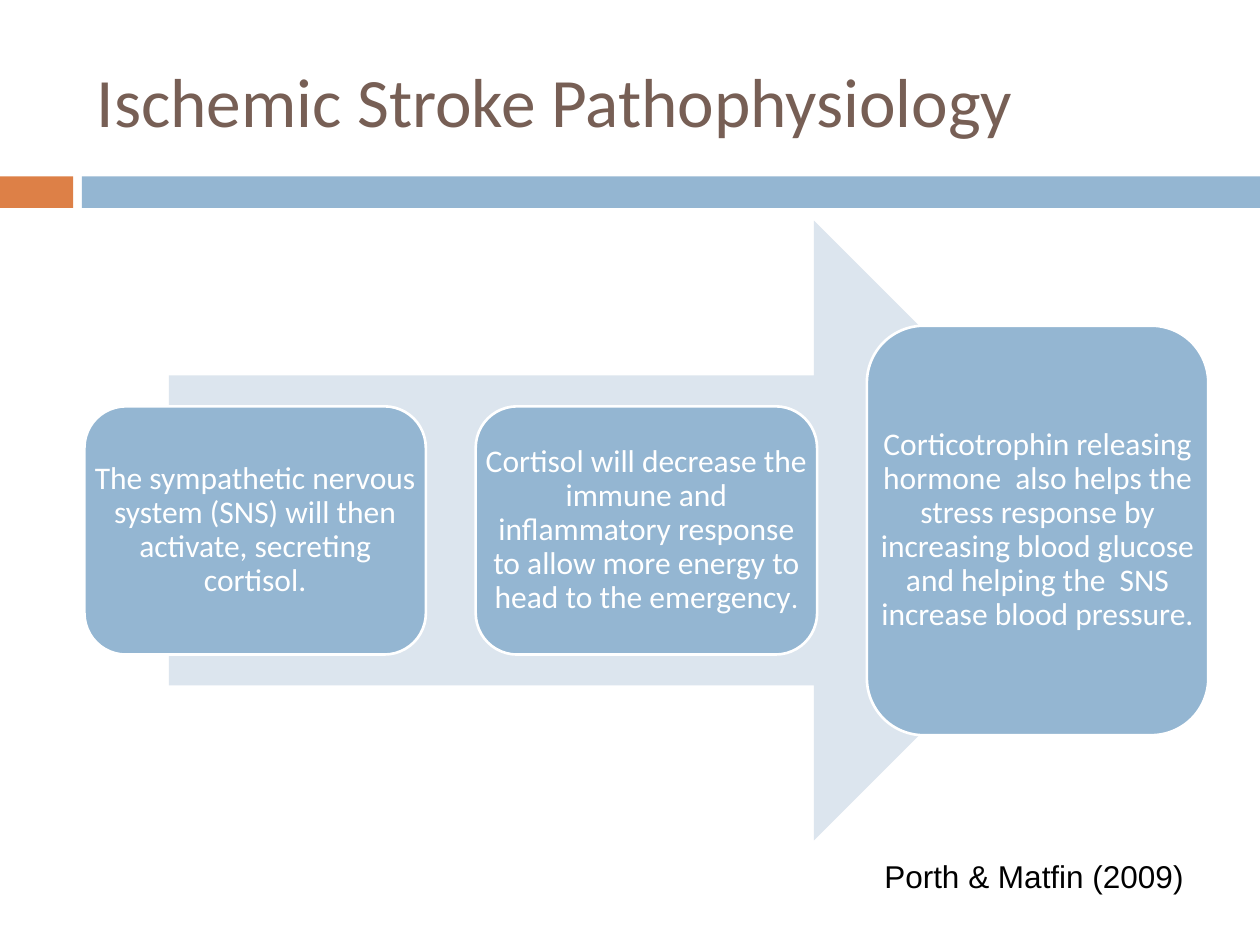
from dataclasses import dataclass

from pptx import Presentation
from pptx.dml.color import RGBColor
from pptx.enum.shapes import MSO_SHAPE as Kind
from pptx.enum.text import MSO_ANCHOR as Anchor, PP_ALIGN as Align
from pptx.util import Inches, Pt

BLUE = RGBColor(0x94, 0xB6, 0xD2)
PALE = RGBColor(0xDC, 0xE5, 0xEE)
ORANGE = RGBColor(0xDD, 0x80, 0x47)
BROWN = RGBColor(0x77, 0x5F, 0x55)
WHITE = RGBColor(0xFF, 0xFF, 0xFF)
BLACK = RGBColor(0x00, 0x00, 0x00)

LEFT, PITCH, WIDE = 0.67, 3.105, 2.71  # step columns
MID = 4.21  # centre line of the steps
PAD = Inches(0.07)
TIGHT = dict(margin_left=PAD, margin_right=PAD, margin_top=PAD, margin_bottom=PAD)


@dataclass
class Box:
    x: float
    y: float
    w: float
    h: float

    def lengths(self) -> list:
        return [Inches(v) for v in (self.x, self.y, self.w, self.h)]


@dataclass
class Run:
    text: str
    size: float = 18
    color: RGBColor = WHITE
    font: str = "Calibri"


@dataclass
class Step:
    high: float
    runs: list[Run]


STEPS = [
    Step(1.97, [Run("The sympathetic nervous system (SNS) will then activate, "
                    "secreting cortisol.")]),
    Step(1.97, [Run("Cortisol will decrease the immune and inflammatory response "
                    "to allow more energy to head to the emergency"),
                Run(".", 16)]),
    Step(3.25, [Run("Corticotrophin releasing hormone  also helps the stress "
                    "response by increasing blood glucose and helping the  SNS "
                    "increase blood pressure.")]),
]


def set_all(target, values: dict) -> None:
    for name, value in values.items():
        setattr(target, name, value)


def add_shape(slide, kind: Kind, box: Box, fill: RGBColor, edge: RGBColor | None = None) -> None:
    shape = slide.shapes.add_shape(kind, *box.lengths())
    shape.shadow.inherit = False
    shape.fill.solid()
    shape.fill.fore_color.rgb = fill
    if edge is None:
        shape.line.fill.background()
    else:
        shape.line.color.rgb = edge
        shape.line.width = Pt(1.5)


def add_text(slide, box: Box, runs: list[Run], frame: dict, para: dict) -> None:
    body = slide.shapes.add_textbox(*box.lengths()).text_frame
    set_all(body, {"word_wrap": True, **frame})
    line = body.paragraphs[0]
    set_all(line, para)
    for item in runs:
        run = line.add_run()
        run.text = item.text
        set_all(run.font, {"size": Pt(item.size), "name": item.font})
        run.font.color.rgb = item.color


def main() -> None:
    deck = Presentation()
    set_all(deck, {"slide_width": Inches(10), "slide_height": Inches(7.5)})
    slide = deck.slides.add_slide(deck.slide_layouts[6])

    # Title and the bar below it
    add_shape(slide, Kind.RECTANGLE, Box(0, 1.4, 0.58, 0.25), ORANGE)
    add_shape(slide, Kind.RECTANGLE, Box(0.65, 1.4, 9.35, 0.25), BLUE)
    add_text(slide, Box(LEFT, 0.25, 8.92, 1.08),
             [Run("Ischemic Stroke Pathophysiology", 39.6, BROWN)],
             {"vertical_anchor": Anchor.MIDDLE}, {})

    # Arrow with the three steps on it
    add_shape(slide, Kind.RIGHT_ARROW, Box(1.34, 1.75, 7.58, 4.92), PALE)
    for i, step in enumerate(STEPS):
        box = Box(LEFT + i * PITCH, MID - step.high / 2, WIDE, step.high)
        add_shape(slide, Kind.ROUNDED_RECTANGLE, box, BLUE, WHITE)
        add_text(slide, box, step.runs,
                 {"vertical_anchor": Anchor.MIDDLE, **TIGHT},
                 {"alignment": Align.CENTER, "line_spacing": 0.9})

    # Citation
    add_text(slide, Box(6.92, 6.75, 2.83, 0.4),
             [Run("Porth & Matfin (2009)", 18, BLACK, "Arial")], {}, {})

    deck.save("out.pptx")


if __name__ == "__main__":
    main()
